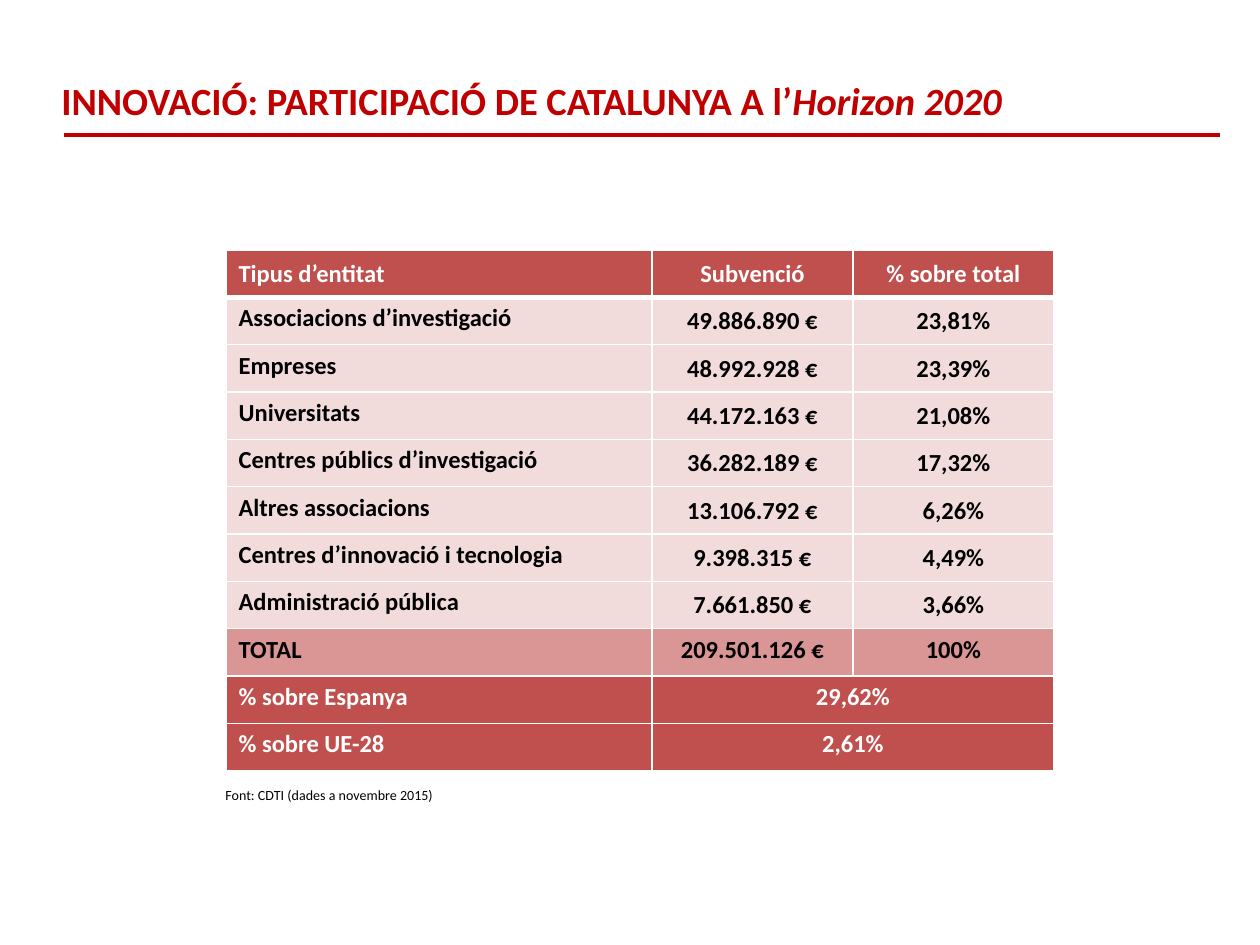
import dataclasses

import pptx
import pptx.dml.color
import pptx.enum.shapes
import pptx.enum.text
import pptx.oxml.ns
import pptx.util
from lxml import etree

PX = 914400 / 126
ALIGN = pptx.enum.text.PP_ALIGN
ANCHOR = pptx.enum.text.MSO_ANCHOR


@dataclasses.dataclass(frozen=True)
class Theme:
    """Colours, font and type sizes of the slide."""
    font: str = "Calibri"
    accent: str = "C00000"
    strong: str = "C0504D"
    medium: str = "D99694"
    light: str = "F2DCDB"
    white: str = "FFFFFF"
    black: str = "000000"
    title_size: int = 22
    table_size: int = 14
    source_size: int = 8


THEME = Theme()
COLUMNS = (426, 201, 201)
HEADER = ("Tipus d’entitat", "Subvenció", "% sobre total")
ENTITIES = (
    ("Associacions d’investigació", "49.886.890 €", "23,81%"),
    ("Empreses", "48.992.928 €", "23,39%"),
    ("Universitats", "44.172.163 €", "21,08%"),
    ("Centres públics d’investigació", "36.282.189 €", "17,32%"),
    ("Altres associacions", "13.106.792 €", "6,26%"),
    ("Centres d’innovació i tecnologia", "9.398.315 €", "4,49%"),
    ("Administració pública", "7.661.850 €", "3,66%"),
)
TOTAL = ("TOTAL", "209.501.126 €", "100%")
SHARES = (("% sobre Espanya", "29,62%"), ("% sobre UE-28", "2,61%"))


def px(n):
    """Turn pixels into EMU."""
    return pptx.util.Emu(round(n * PX))


def rgb(colour):
    """Return a colour object for a hex string."""
    return pptx.dml.color.RGBColor.from_string(colour)


def add_run(p, text, size, colour, **formats):
    """Append a formatted run to a paragraph."""
    r = p.add_run()
    r.text = text
    r.font.color.rgb = rgb(colour)
    values = {"name": THEME.font, "size": pptx.util.Pt(size), **formats}
    for name, value in values.items():
        setattr(r.font, name, value)


def add_text(s, box, runs, size, colour, **frame):
    """Add a text box holding one paragraph of (text, formats) runs."""
    tf = s.shapes.add_textbox(*map(px, box)).text_frame
    for name, value in frame.items():
        setattr(tf, name, value)
    for text, formats in runs:
        add_run(tf.paragraphs[0], text, size, colour, **formats)


def add_rule(s, x1, x2, y):
    """Draw the horizontal rule below the title."""
    line = s.shapes.add_connector(
        pptx.enum.shapes.MSO_CONNECTOR.STRAIGHT, px(x1), px(y), px(x2), px(y))
    line.line.color.rgb = rgb(THEME.accent)
    line.line.width = pptx.util.Pt(2.25)
    etree.SubElement(line._element.spPr, pptx.oxml.ns.qn("a:effectLst"))


def set_borders(cell, top, bottom):
    """Give a cell white borders with the top and bottom widths in points."""
    qn = pptx.oxml.ns.qn
    props = cell._tc.get_or_add_tcPr()
    sides = (("L", 1), ("R", 1), ("T", top), ("B", bottom))
    for i, (side, width) in enumerate(sides):
        ln = etree.Element(qn(f"a:ln{side}"), w=str(pptx.util.Pt(width)))
        fill = etree.SubElement(ln, qn("a:solidFill"))
        etree.SubElement(fill, qn("a:srgbClr"), val=THEME.white)
        props.insert(i, ln)


def style_cell(cell, fill, top=1, bottom=1):
    """Fill a cell and draw its borders."""
    cell.fill.solid()
    cell.fill.fore_color.rgb = rgb(fill)
    set_borders(cell, top, bottom)


def write_cell(cell, text, colour, centred, **formats):
    """Write bold text into a cell and set its format values."""
    for name, value in formats.items():
        setattr(cell, name, value)
    p = cell.text_frame.paragraphs[0]
    p.alignment = ALIGN.CENTER if centred else ALIGN.LEFT
    add_run(p, text, THEME.table_size, colour, bold=True)


def add_grants_table(s, left, top, height):
    """Add the table of grants by type of entity."""
    middle = {"vertical_anchor": ANCHOR.MIDDLE}
    tight = {**middle, "margin_left": px(1), "margin_top": px(1),
             "margin_right": px(1), "margin_bottom": 0}
    header = (THEME.strong, THEME.white, middle, {"bottom": 3})
    body = (THEME.light, THEME.black, tight, {})
    total = (THEME.medium, THEME.black, {}, {})
    share = (THEME.strong, THEME.white, {}, {})
    rows = [(HEADER, header), *((e, body) for e in ENTITIES),
            (TOTAL, total), *((e, share) for e in SHARES)]

    table = s.shapes.add_table(len(rows), len(COLUMNS), px(left), px(top),
                               px(sum(COLUMNS)), px(height)).table
    for column, width in zip(table.columns, COLUMNS):
        column.width = px(width)
    for i, (texts, (fill, colour, formats, borders)) in enumerate(rows):
        table.rows[i].height = px(height / len(rows))
        edges = {"top": 3} if i == 1 else borders
        for j in range(len(COLUMNS)):
            style_cell(table.cell(i, j), fill, **edges)
        if len(texts) < len(COLUMNS):
            table.cell(i, 1).merge(table.cell(i, 2))
        for j, text in enumerate(texts):
            cell_formats = {} if formats is tight and j == 0 else formats
            write_cell(table.cell(i, j), text, colour, j > 0, **cell_formats)


def main():
    """Build the slide and save it."""
    prs = pptx.Presentation()
    prs.slide_width, prs.slide_height = px(1260), px(945)
    s = prs.slides.add_slide(prs.slide_layouts[6])
    add_rule(s, 64, 1220, 135)
    add_text(s, (49, 66, 1181, 69),
             [("INNOVACIÓ: PARTICIPACIÓ DE CATALUNYA A l’", {"bold": True}),
              ("Horizon 2020", {"bold": True, "italic": True})],
             THEME.title_size, THEME.accent,
             word_wrap=True, vertical_anchor=ANCHOR.MIDDLE)
    add_grants_table(s, 226, 250, 521)
    add_text(s, (213, 780, 234, 30),
             [("Font: CDTI (dades a novembre 2015)", {})],
             THEME.source_size, THEME.black, word_wrap=False,
             auto_size=pptx.enum.text.MSO_AUTO_SIZE.SHAPE_TO_FIT_TEXT)
    prs.save("out.pptx")


if __name__ == "__main__":
    main()
